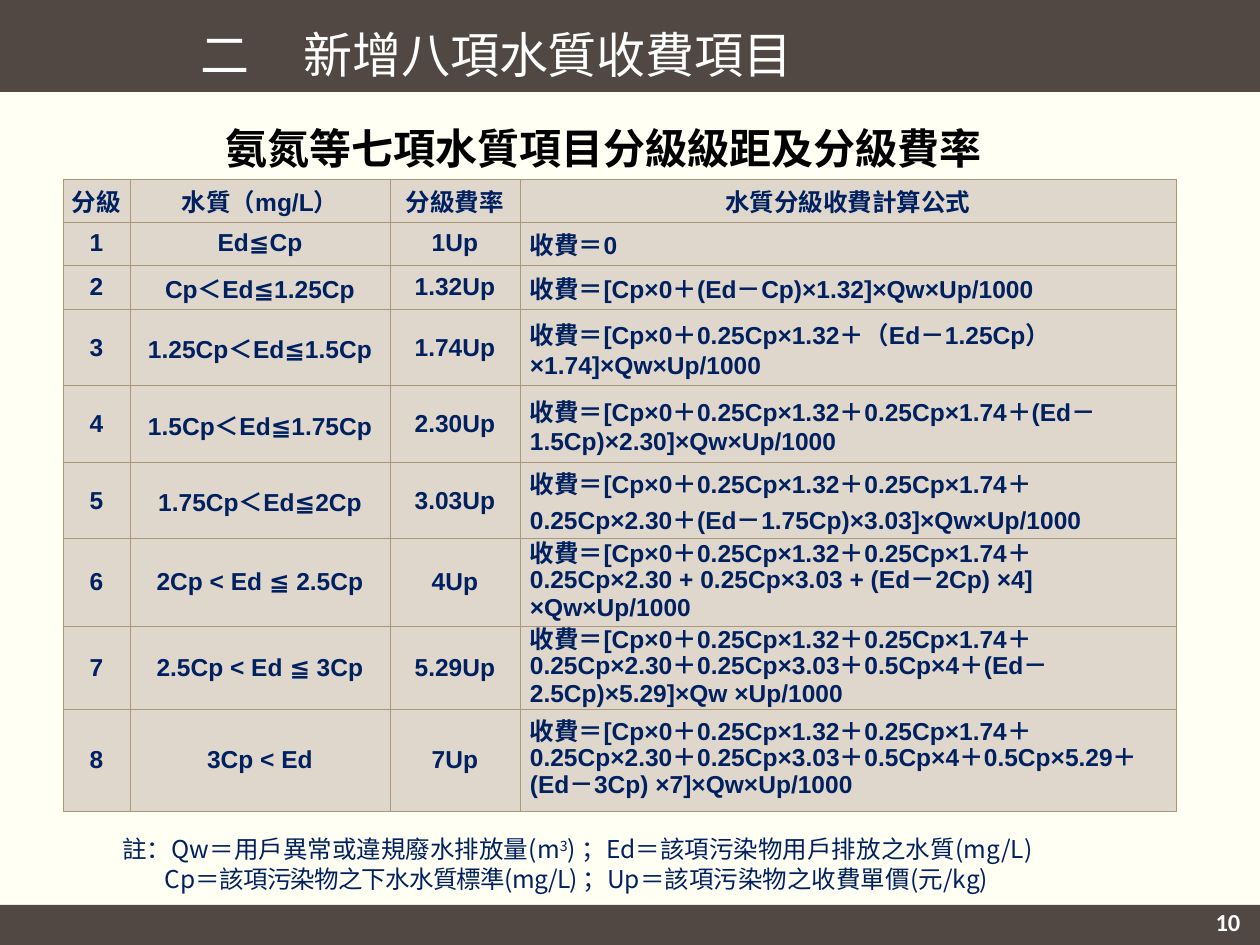
from lxml.etree import SubElement
from pptx import Presentation
from pptx.dml.color import RGBColor
from pptx.enum.shapes import MSO_SHAPE as SHAPE
from pptx.enum.text import MSO_ANCHOR as ANCHOR, PP_ALIGN as ALIGN
from pptx.oxml.ns import qn
from pptx.util import Pt

CREAM, BROWN, SAND, TAN = "FFFFF3", "514843", "DFD7CB", "AB977A"
NAVY, WHITE, BLACK = "002060", "FFFFFF", "000000"
SC, JP = "Noto Sans CJK SC", "Noto Sans CJK JP"

BANDS = [(0, 0, 1260, 92), (0, 905, 1260, 40)]
TITLE = "二\t新增八項水質收費項目"
SUBTITLE = "氨氮等七項水質項目分級級距及分級費率"
PAGE = "10"
NOTES = [
    [("註：Qw＝用戶異常或違規廢水排放量(m", {}), ("3", {"baseline": "30000"}),
     (") ；Ed＝該項污染物用戶排放之水質(mg/L)", {})],
    [("Cp＝", {}), ("該項污染物之下水水質標準(mg/L) ；", {"spc": "-50"}),
     ("Up＝該項污染物之收費單價(元/kg)", {})],
]
COLS = [67, 260, 130, 656]
HEIGHTS = [43, 43, 45, 76, 77, 76, 88, 83, 102]
FIRST_TIGHT_ROW = 6
ROWS = [
    ("分級", "水質（mg/L）", "分級費率", "水質分級收費計算公式"),
    ("1", "Ed≦Cp", "1Up", "收費＝0"),
    ("2", "Cp＜Ed≦1.25Cp", "1.32Up", "收費＝[Cp×0＋(Ed－Cp)×1.32]×Qw×Up/1000"),
    ("3", "1.25Cp＜Ed≦1.5Cp", "1.74Up",
     "收費＝[Cp×0＋0.25Cp×1.32＋（Ed－1.25Cp）×1.74]×Qw×Up/1000"),
    ("4", "1.5Cp＜Ed≦1.75Cp", "2.30Up",
     "收費＝[Cp×0＋0.25Cp×1.32＋0.25Cp×1.74＋(Ed－1.5Cp)×2.30]×Qw×Up/1000"),
    ("5", "1.75Cp＜Ed≦2Cp", "3.03Up",
     "收費＝[Cp×0＋0.25Cp×1.32＋0.25Cp×1.74＋0.25Cp×2.30＋(Ed－1.75Cp)×3.03]×Qw×Up/1000"),
    ("6", "2Cp < Ed ≦ 2.5Cp", "4Up",
     "收費＝[Cp×0＋0.25Cp×1.32＋0.25Cp×1.74＋0.25Cp×2.30 + 0.25Cp×3.03 + "
     "(Ed－2Cp) ×4] ×Qw×Up/1000"),
    ("7", "2.5Cp < Ed ≦ 3Cp", "5.29Up",
     "收費＝[Cp×0＋0.25Cp×1.32＋0.25Cp×1.74＋0.25Cp×2.30＋0.25Cp×3.03＋0.5Cp×4＋"
     "(Ed－2.5Cp)×5.29]×Qw ×Up/1000"),
    ("8", "3Cp < Ed", "7Up",
     "收費＝[Cp×0＋0.25Cp×1.32＋0.25Cp×1.74＋0.25Cp×2.30＋0.25Cp×3.03＋0.5Cp×4＋"
     "0.5Cp×5.29＋(Ed－3Cp) ×7]×Qw×Up/1000"),
]


def px(n):
    return round(n * 914400 / 126)


def rgb(color):
    return RGBColor.from_string(color)


def style(p, size, color, latin, bold=False, ea=SC):
    f = p.font
    f.size, f.bold, f.name = Pt(size), bold, latin
    f.color.rgb = rgb(color)
    props = p._p.get_or_add_pPr().find(qn("a:defRPr"))
    SubElement(props, qn("a:ea"), typeface=ea)


def add_text(s, box, paragraphs, wrap=True):
    tf = s.shapes.add_textbox(*map(px, box)).text_frame
    tf.word_wrap = wrap
    for i, runs in enumerate(paragraphs):
        p = tf.add_paragraph() if i else tf.paragraphs[0]
        for text, attrs in runs:
            r = p.add_run()
            r.text = text
            for name, value in attrs.items():
                r._r.get_or_add_rPr().set(name, value)
    return tf.paragraphs


def add_borders(cell):
    props = cell._tc.get_or_add_tcPr()
    for i, side in enumerate(("lnL", "lnR", "lnT", "lnB")):
        line = SubElement(props, qn("a:" + side), w=str(Pt(0.5)))
        fill = SubElement(line, qn("a:solidFill"))
        SubElement(fill, qn("a:srgbClr"), val=TAN)
        props.insert(i, line)


def add_rates(s):
    box = (63, 179, sum(COLS), sum(HEIGHTS))
    table = s.shapes.add_table(len(ROWS), len(COLS), *map(px, box)).table
    table.first_row = table.horz_banding = False
    for col, width in zip(table.columns, COLS):
        col.width = px(width)
    for i, (row, height) in enumerate(zip(ROWS, HEIGHTS)):
        table.rows[i].height = px(height)
        for j, text in enumerate(row):
            cell = table.cell(i, j)
            formula = i > 0 and j == 3
            cell.vertical_anchor = ANCHOR.MIDDLE
            cell.margin_top = cell.margin_bottom = 0
            cell.margin_left, cell.margin_right = map(px, (10, 5) if formula else (2, 2))
            cell.fill.solid()
            cell.fill.fore_color.rgb = rgb(SAND)
            add_borders(cell)
            p = cell.text_frame.paragraphs[0]
            p.text = text
            p.alignment = ALIGN.LEFT if formula else ALIGN.CENTER
            if i >= FIRST_TIGHT_ROW:
                p.line_spacing = Pt(15)
            style(p, 14, NAVY, "Arial", True)


def main():
    """Build the water-quality fee slide."""
    prs = Presentation()
    prs.slide_width, prs.slide_height = px(1260), px(945)
    s = prs.slides.add_slide(prs.slide_layouts[6])
    s.background.fill.solid()
    s.background.fill.fore_color.rgb = rgb(CREAM)

    for box in BANDS:
        band = s.shapes.add_shape(SHAPE.RECTANGLE, *map(px, box))
        band.shadow.inherit = False
        band.fill.solid()
        band.fill.fore_color.rgb = rgb(BROWN)
        band.line.fill.background()

    p, = add_text(s, (213, 116, 814, 63), [[(SUBTITLE, {})]])
    style(p, 24, BLACK, JP, True, JP)

    add_rates(s)

    notes = add_text(s, (110, 828, 1062, 72), NOTES)
    notes[1]._p.get_or_add_pPr().set("indent", str(px(42)))
    for p in notes:
        style(p, 14, NAVY, SC)

    p, = add_text(s, (1203, 901, 50, 43), [[(PAGE, {})]], wrap=False)
    p.alignment = ALIGN.CENTER
    style(p, 14, WHITE, "Calibri", True)

    p, = add_text(s, (188, 18, 892, 72), [[(TITLE, {})]])
    tabs = SubElement(p._p.get_or_add_pPr(), qn("a:tabLst"))
    SubElement(tabs, qn("a:tab"), pos=str(px(103)), algn="l")
    style(p, 28, WHITE, SC)

    prs.save("out.pptx")


if __name__ == "__main__":
    main()
